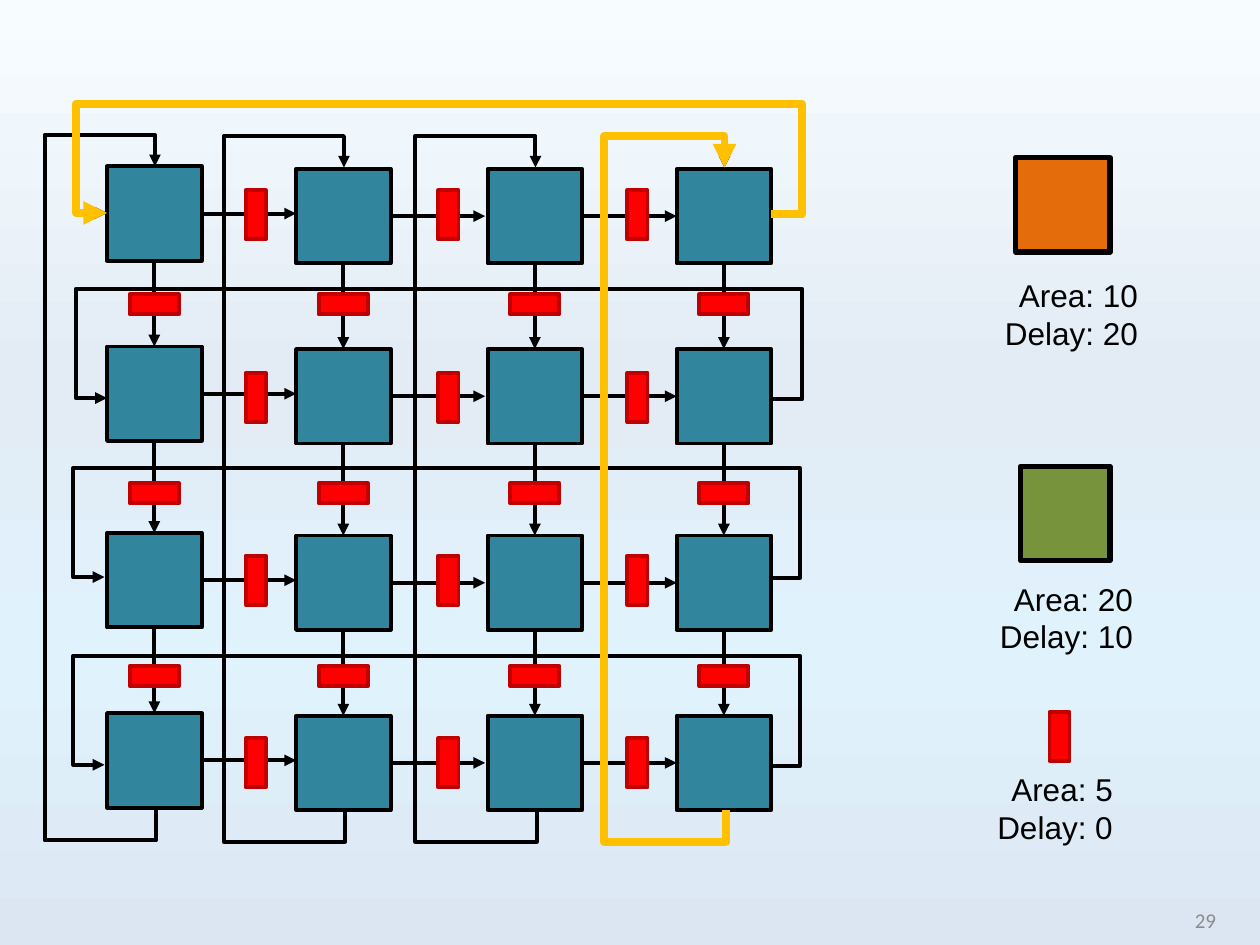
from copy import deepcopy

from lxml.etree import SubElement
from pptx import Presentation
from pptx.dml.color import RGBColor
from pptx.enum.shapes import MSO_CONNECTOR, MSO_SHAPE
from pptx.enum.text import MSO_ANCHOR, MSO_AUTO_SIZE, PP_ALIGN
from pptx.oxml.ns import qn
from pptx.util import Inches, Pt

BLACK = RGBColor(0x00, 0x00, 0x00)
TEAL = RGBColor(0x31, 0x85, 0x9C)
ORANGE = RGBColor(0xE4, 0x6C, 0x0A)
GREEN = RGBColor(0x77, 0x93, 0x3C)
RED = RGBColor(0xFF, 0x00, 0x00)
DARK_RED = RGBColor(0xC0, 0x00, 0x00)
GOLD = RGBColor(0xFF, 0xC0, 0x00)
GREY = RGBColor(0x8C, 0x8C, 0x8C)
SKY = [
    (0, RGBColor(0xF7, 0xFD, 0xFF)),
    (0.4, RGBColor(0xE3, 0xEB, 0xF5)),
    (0.7, RGBColor(0xE0, 0xF3, 0xFC)),
    (1, RGBColor(0xDC, 0xE6, 0xF2)),
]

CELL = 0.75
REGISTER_WIDTH, REGISTER_HEIGHT = 0.16, 0.39
COLUMNS = [0, 1.5, 3.02, 4.52]
ROWS = [0, 1.43, 2.91, 4.34]
LOOP_SHIFT = 0.01


def paint_background(slide):
    """Fill the slide with the vertical four-stop gradient."""
    fill = slide.background.fill
    fill.gradient()
    fill.gradient_angle = 270
    stop_list = slide.element.find(".//" + qn("a:gsLst"))
    while len(stop_list) < len(SKY):
        stop_list.append(deepcopy(stop_list[0]))
    for stop, (position, color) in zip(fill.gradient_stops, SKY):
        stop.position = position
        stop.color.rgb = color


def add_block(slide, left, top, width, height, fill, outline=BLACK, weight=2.25):
    """Draw one outlined rectangle."""
    block = slide.shapes.add_shape(
        MSO_SHAPE.RECTANGLE, Inches(left), Inches(top), Inches(width), Inches(height)
    )
    block.shadow.inherit = False
    block.fill.solid()
    block.fill.fore_color.rgb = fill
    block.line.color.rgb = outline
    block.line.width = Pt(weight)
    return block


def add_register(slide, left, top, weight=2.25):
    """Draw one upright red register."""
    return add_block(slide, left, top, REGISTER_WIDTH, REGISTER_HEIGHT, RED, DARK_RED, weight)


def add_arrow(slide, start, end, kind=MSO_CONNECTOR.STRAIGHT, color=BLACK, weight=2.25):
    """Draw a connector with a triangle head at its end."""
    arrow = slide.shapes.add_connector(kind, *map(Inches, (*start, *end)))
    arrow.line.color.rgb = color
    arrow.line.width = Pt(weight)
    SubElement(arrow.line._get_or_add_ln(), qn("a:tailEnd"), type="triangle")
    SubElement(arrow._element.spPr, qn("a:effectLst"))
    return arrow


def bend_loop(loop, bends):
    """Give a connector five segments bent at the given fractions."""
    geometry = loop._element.spPr.find(qn("a:prstGeom"))
    geometry.set("prst", "bentConnector5")
    guides = geometry.find(qn("a:avLst"))
    if guides is None:
        guides = SubElement(geometry, qn("a:avLst"))
    for number, bend in enumerate(bends, 1):
        SubElement(guides, qn("a:gd"), name=f"adj{number}", fmla=f"val {round(bend * 100000)}")


def add_row_loop(slide, right, y, color=BLACK, weight=2.25):
    """Lead a row's output over the row and back to its first cell."""
    span, margin, rise = 5.27, 0.25, 0.89
    loop = add_arrow(slide, (right, y), (right - span, y - LOOP_SHIFT),
                     MSO_CONNECTOR.ELBOW, color, weight)
    bend_loop(loop, (-margin / span, rise / LOOP_SHIFT, 1 + margin / span))


def add_column_loop(slide, x, top, reach, color=BLACK, weight=2.25):
    """Lead a column's output around its left side and back to the top."""
    span, margin = 5.1, 0.25
    left = x - (LOOP_SHIFT + span) / 2
    middle = top + (span - LOOP_SHIFT) / 2
    loop = add_arrow(slide, (left + span, middle), (left, middle + LOOP_SHIFT),
                     MSO_CONNECTOR.ELBOW, color, weight)
    loop._element.spPr.find(qn("a:xfrm")).set("rot", "5400000")
    bend_loop(loop, (-margin / span, reach / LOOP_SHIFT, 1 + margin / span))


def add_array(slide, left, top):
    """Draw the 4 by 4 cell array with its arrows, loops and registers."""
    half = CELL / 2
    for column, x in enumerate(COLUMNS):
        x += left
        column_top = top - 0.02 if column == 0 else top
        for row, y in enumerate(ROWS):
            y += column_top
            add_block(slide, x, y, CELL, CELL, TEAL)
            if column < len(COLUMNS) - 1:
                add_arrow(slide, (x + CELL, y + half), (x + 2 * CELL, y + half))
            if row < len(ROWS) - 1:
                add_arrow(slide, (x + half, y + CELL), (x + half, column_top + ROWS[row + 1]))

    row_loops = [(5.27, 0.36), (5.27, 1.83), (5.25, 3.25), (5.25, 4.74)]
    for x, y in row_loops:
        add_row_loop(slide, left + x, top + y)
    for column, x in enumerate(COLUMNS):
        reach = 0.9 if column == 0 else 0.98
        add_column_loop(slide, left + x + 0.39, top - 0.01 - 0.01 * (column == 0), reach)

    for x in (1.1, 2.63, 4.13):
        for row in range(4):
            add_register(slide, left + x, top + 0.17 + 1.45 * row)
    for x in COLUMNS:
        for y in (0.88, 2.38, 3.83):
            add_register(slide, left + x + half - REGISTER_WIDTH / 2, top + y).rotation = 270

    add_row_loop(slide, left + 5.27, top + 0.36, GOLD, 4.5)
    add_column_loop(slide, left + COLUMNS[-1] + 0.39, top - 0.01, 0.98, GOLD, 4.5)


def add_caption(slide, left, top, width, height, lines, font_name, size, color):
    """Write right-aligned lines in a text box."""
    box = slide.shapes.add_textbox(Inches(left), Inches(top), Inches(width), Inches(height))
    frame = box.text_frame
    frame.word_wrap = True
    frame.text = "\n".join(lines)
    for paragraph in frame.paragraphs:
        paragraph.alignment = PP_ALIGN.RIGHT
        paragraph.font.name = font_name
        paragraph.font.size = Pt(size)
        paragraph.font.color.rgb = color
    return frame


def add_legend(slide, left, top):
    """Draw the three components with their area and delay."""
    add_block(slide, left + 0.48, top, CELL, CELL, ORANGE, weight=3)
    add_block(slide, left + 0.52, top + 2.45, 0.71, CELL, GREEN, weight=3)
    add_register(slide, left + 0.75, top + 4.4, weight=2)
    costs = [(0.2, 0.89, 10, 20), (0.16, 3.3, 20, 10), (0, 4.81, 5, 0)]
    for x, y, area, delay in costs:
        caption = add_caption(slide, left + x, top + y, 1.35, 0.71,
                              [f"Area: {area}", f"Delay: {delay}"], "Arial", 18, BLACK)
        caption.auto_size = MSO_AUTO_SIZE.SHAPE_TO_FIT_TEXT


def add_page_number(slide, left, top):
    """Write the slide number."""
    number = add_caption(slide, left, top, 2.33, 0.4, ["29"], "Calibri", 12, GREY)
    number.vertical_anchor = MSO_ANCHOR.MIDDLE


def main():
    """Build the slide and save it."""
    presentation = Presentation()
    presentation.slide_width = Inches(10)
    presentation.slide_height = Inches(7.5)
    slide = presentation.slides.add_slide(presentation.slide_layouts[6])
    paint_background(slide)
    add_page_number(slide, 7.42, 7.1)
    add_array(slide, 0.85, 1.34)
    add_legend(slide, 7.58, 1.25)
    presentation.save("out.pptx")


if __name__ == "__main__":
    main()
